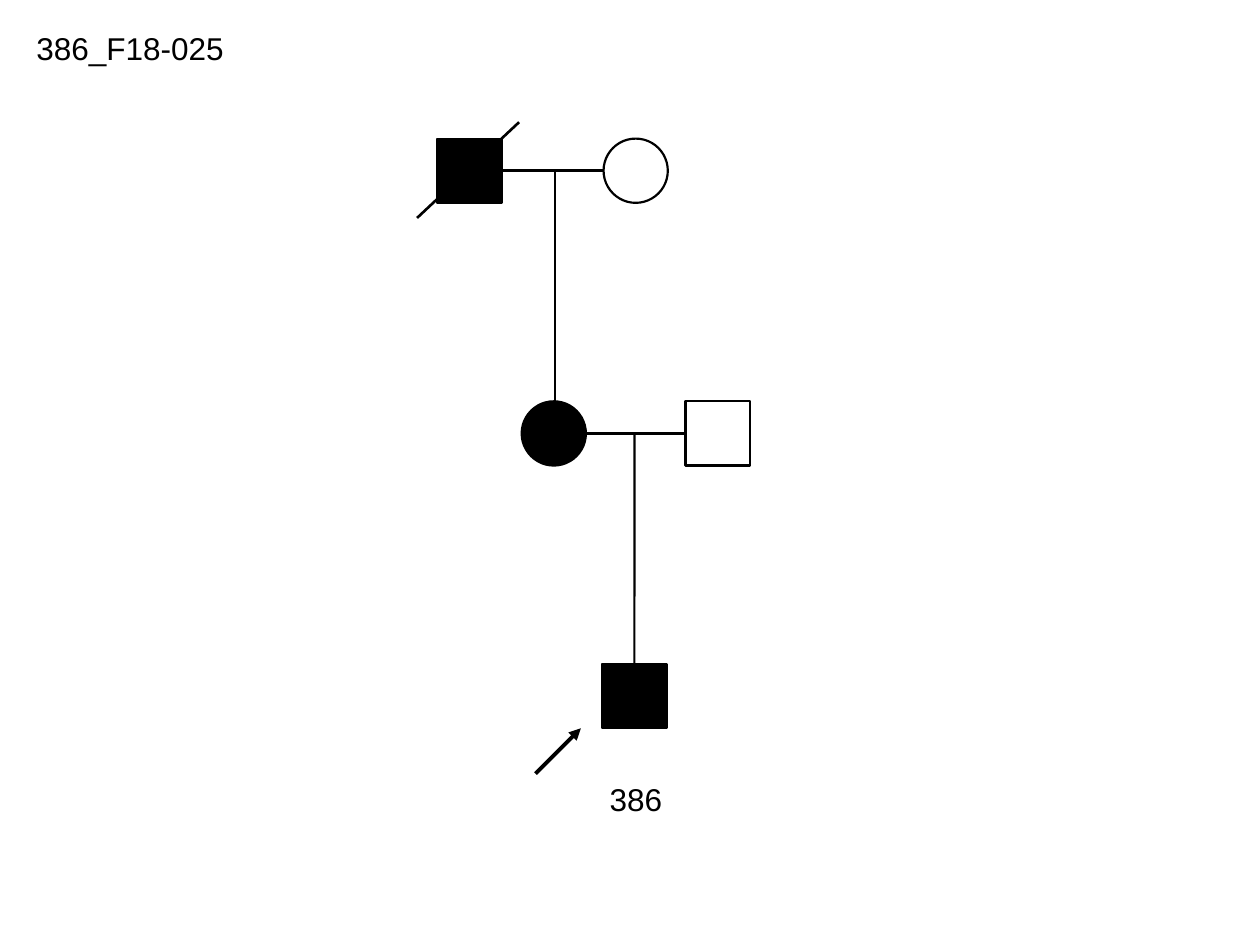
from lxml import etree
from pptx import Presentation
from pptx.dml.color import RGBColor
from pptx.enum.shapes import MSO_CONNECTOR, MSO_SHAPE
from pptx.enum.text import MSO_AUTO_SIZE
from pptx.oxml.ns import qn
from pptx.util import Inches, Pt

MALE, FEMALE = MSO_SHAPE.RECTANGLE, MSO_SHAPE.OVAL
STRAIGHT = MSO_CONNECTOR.STRAIGHT
FIT_SHAPE = MSO_AUTO_SIZE.SHAPE_TO_FIT_TEXT
TOP, LEFT, RIGHT = 0, 1, 3
BLACK, WHITE = "000000", "FFFFFF"
SYMBOL = 0.51
FIRST_ROW, ROW_STEP = 1.1, 2.085


def color(value):
    """Turn a hex string into a colour."""
    return RGBColor.from_string(value)


def row_top(generation):
    """Give the top of a generation's row."""
    return FIRST_ROW + generation * ROW_STEP


def add_person(slide, sex, left, top, fill):
    """Draw one family member as a square or a circle."""
    shape = slide.shapes.add_shape(sex, Inches(left), Inches(top), Inches(SYMBOL), Inches(SYMBOL))
    shape.shadow.inherit = False
    if fill:
        shape.fill.solid()
        shape.fill.fore_color.rgb = color(fill)
    else:
        shape.fill.background()
    shape.line.color.rgb = color(BLACK)
    shape.line.width = Pt(1.25)
    return shape


def add_line(slide, start, end, width=1.25):
    """Draw a straight black line without a shadow."""
    connector = slide.shapes.add_connector(STRAIGHT, *(Inches(value) for value in start + end))
    connector.line.color.rgb = color(BLACK)
    connector.line.width = Pt(width)
    etree.SubElement(connector._element.spPr, qn("a:effectLst"))
    return connector


def add_label(slide, text, left, top, width):
    """Write one line of text."""
    box = slide.shapes.add_textbox(Inches(left), Inches(top), Inches(width), Inches(0.4))
    frame = box.text_frame
    frame.text = text
    frame.word_wrap = False
    frame.auto_size = FIT_SHAPE
    font = frame.paragraphs[0].runs[0].font
    font.name, font.size = "Arial", Pt(18)
    font.color.rgb = color(BLACK)


def add_couple(slide, left, top, width, members, descent_share):
    """Draw two partners with their line and the line of descent."""
    right = left + width - SYMBOL
    middle = top + SYMBOL / 2
    partners = [add_person(slide, sex, x, top, fill) for (sex, fill), x in zip(members, (left, right))]
    mating = add_line(slide, (right, middle), (left + SYMBOL, middle), 1.5)
    if members[0][0] == MALE:
        mating.end_connect(partners[0], RIGHT)
    if members[1][0] == MALE:
        mating.begin_connect(partners[1], LEFT)
    descent_x = left + width * descent_share
    return add_line(slide, (descent_x, middle), (descent_x, top + ROW_STEP))


def add_deceased_mark(slide, left, top, width, height):
    """Strike through a member with a rising slash."""
    add_line(slide, (left, top + height), (left + width, top), 1.5)


def add_proband(slide, left, top, name, descent):
    """Draw the proband with the name, the arrow and the line from the parents."""
    person = add_person(slide, MALE, left, top, BLACK)
    descent.end_connect(person, TOP)
    arrow_top = top + SYMBOL
    arrow = add_line(slide, (left - 0.53, arrow_top + 0.36), (left - 0.17, arrow_top), 2.25)
    etree.SubElement(arrow.line._get_or_add_ln(), qn("a:tailEnd"), type="triangle")
    add_label(slide, name, left - 0.04, arrow_top + 0.36, 0.62)


def main():
    """Build the pedigree slide."""
    presentation = Presentation()
    presentation.slide_width, presentation.slide_height = Inches(10), Inches(7.5)
    slide = presentation.slides.add_slide(presentation.slide_layouts[6])
    add_label(slide, "386_F18-025", 0.19, 0.18, 1.7)
    add_couple(slide, 3.47, row_top(0), 1.83, ((MALE, BLACK), (FEMALE, WHITE)), 0.51)
    add_deceased_mark(slide, 3.31, 0.97, 0.81, 0.76)
    descent = add_couple(slide, 4.14, row_top(1), 1.81, ((FEMALE, BLACK), (MALE, None)), 0.495)
    add_proband(slide, 4.78, row_top(2), "386", descent)
    presentation.save("out.pptx")


if __name__ == "__main__":
    main()
